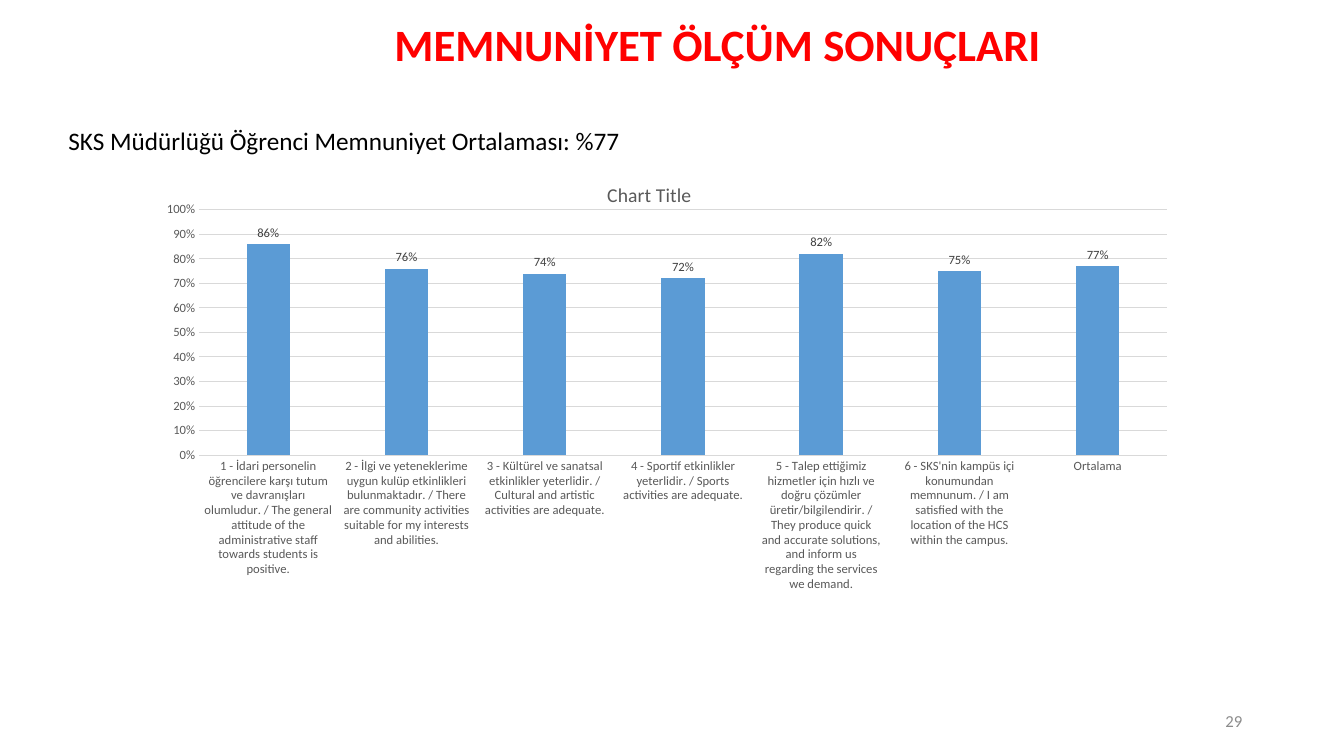
from lxml.etree import SubElement
from pptx import Presentation
from pptx.chart.data import CategoryChartData
from pptx.dml.color import RGBColor
from pptx.enum.chart import XL_CHART_TYPE, XL_LABEL_POSITION, XL_TICK_MARK
from pptx.enum.text import MSO_ANCHOR, PP_ALIGN
from pptx.oxml.ns import qn
from pptx.util import Inches, Pt

FACE = "Calibri"
RED = RGBColor(0xFF, 0x00, 0x00)
BLACK = RGBColor(0x00, 0x00, 0x00)
BLUE = RGBColor(0x5B, 0x9B, 0xD5)
DARK = RGBColor(0x40, 0x40, 0x40)
GRAY = RGBColor(0x59, 0x59, 0x59)
PALE = RGBColor(0xD9, 0xD9, 0xD9)
MUTED = RGBColor(0x8C, 0x8C, 0x8C)

SCORES = [
    ("1 - İdari personelin öğrencilere karşı tutum ve davranışları olumludur. / "
     "The general attitude of the administrative staff towards students is positive.", 0.86),
    ("2 - İlgi ve yeteneklerime uygun kulüp etkinlikleri bulunmaktadır. / "
     "There are community activities suitable for my interests and abilities.", 0.76),
    ("3 - Kültürel ve sanatsal etkinlikler yeterlidir. / "
     "Cultural and artistic activities are adequate.", 0.74),
    ("4 - Sportif etkinlikler yeterlidir. / Sports activities are adequate.", 0.72),
    ("5 - Talep ettiğimiz hizmetler için hızlı ve doğru çözümler üretir/bilgilendirir. / "
     "They produce quick and accurate solutions, and inform us regarding the services "
     "we demand.", 0.82),
    ("6 - SKS'nin kampüs içi konumundan memnunum. / "
     "I am satisfied with the location of the HCS within the campus.", 0.75),
    ("Ortalama", 0.77),
]


def style(font, size, color, bold=False):
    font.name, font.size, font.bold = FACE, Pt(size), bold
    font.color.rgb = color


def add_text(slide, box, text, size, color, align=PP_ALIGN.LEFT,
             bold=False, anchor=MSO_ANCHOR.TOP):
    frame = slide.shapes.add_textbox(*map(Inches, box)).text_frame
    frame.word_wrap = True
    frame.vertical_anchor = anchor
    frame.text = text
    line = frame.paragraphs[0]
    line.alignment = align
    style(line.runs[0].font, size, color, bold)


def set_plot(chart, x, y, w, h):
    """Fix the inner plot area, in fractions of the chart."""
    plot = chart._chartSpace.chart.plotArea
    for old in plot.findall(qn("c:layout")):
        plot.remove(old)
    layout = SubElement(plot, qn("c:layout"))
    plot.insert(0, layout)
    manual = SubElement(layout, qn("c:manualLayout"))
    parts = [("layoutTarget", "inner"), ("xMode", "edge"), ("yMode", "edge"),
             ("x", x), ("y", y), ("w", w), ("h", h)]
    for tag, val in parts:
        SubElement(manual, qn(f"c:{tag}")).set("val", str(val))


def add_scores(slide, box):
    data = CategoryChartData(number_format="0%")
    data.categories = [name for name, _ in SCORES]
    data.add_series("Series 1", [score for _, score in SCORES])
    chart = slide.shapes.add_chart(
        XL_CHART_TYPE.COLUMN_CLUSTERED, *map(Inches, box), data).chart
    style(chart.font, 10, BLACK)
    chart.has_legend = False
    chart.has_title = True
    title = chart.chart_title.text_frame
    title.text = "Chart Title"
    style(title.paragraphs[0].runs[0].font, 14, GRAY)
    set_plot(chart, 0.119, 0.09, 0.819, 0.455)

    # Axes
    names, scale = chart.category_axis, chart.value_axis
    for axis in (names, scale):
        axis.major_tick_mark = axis.minor_tick_mark = XL_TICK_MARK.NONE
        style(axis.tick_labels.font, 9, GRAY)
    scale.minimum_scale, scale.maximum_scale, scale.major_unit = 0, 1, 0.1
    scale.tick_labels.number_format = "0%"
    scale.tick_labels.number_format_is_linked = False
    scale.format.line.fill.background()
    for line in (names.format.line, scale.major_gridlines.format.line):
        line.color.rgb, line.width = PALE, Pt(0.75)

    # Bars and their labels
    plot = chart.plots[0]
    plot.gap_width, plot.overlap, plot.vary_by_categories = 219, -27, False
    bars = plot.series[0]
    bars.format.fill.solid()
    bars.format.fill.fore_color.rgb = BLUE
    labels = bars.data_labels
    labels.show_value = True
    labels.position = XL_LABEL_POSITION.OUTSIDE_END
    labels.number_format, labels.number_format_is_linked = "0%", False
    style(labels.font, 9, DARK)


def main():
    deck = Presentation()
    deck.slide_width, deck.slide_height = Inches(13.33), Inches(7.5)
    slide = deck.slides.add_slide(deck.slide_layouts[6])
    # Page number
    add_text(slide, (9.42, 6.95, 3, 0.4), "29", 12, MUTED,
             PP_ALIGN.RIGHT, anchor=MSO_ANCHOR.MIDDLE)
    # Heading and summary
    add_text(slide, (2.67, 0.12, 8.9, 0.64), "MEMNUNİYET ÖLÇÜM SONUÇLARI",
             32, RED, PP_ALIGN.CENTER, bold=True)
    add_text(slide, (0.58, 1.19, 10.69, 0.4),
             "SKS Müdürlüğü Öğrenci Memnuniyet Ortalaması: %77", 18, BLACK)
    # Survey chart
    add_scores(slide, (0.58, 1.6, 11.72, 5.35))
    deck.save("out.pptx")


if __name__ == "__main__":
    main()
